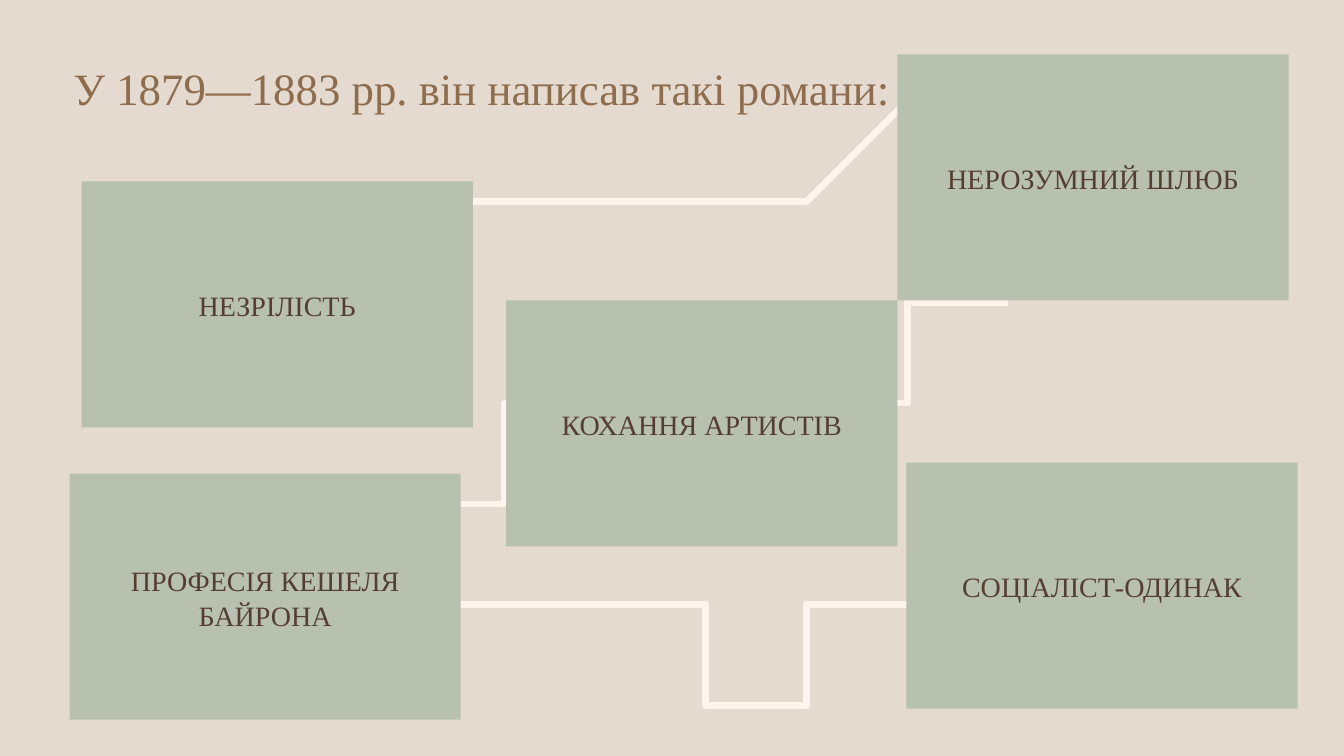
"""Build a slide of five novel titles on cards joined by winding threads."""
import pptx
import pptx.util
import pptx.dml.color
import pptx.enum.shapes
import pptx.enum.text
from lxml import etree

HUES = {"back": "E5DACF", "card": "B8C0B0", "thread": "FEF3ED",
        "title": "8D6D4D", "text": "543E34"}
FACE = "Times New Roman"
STEPS = 16

deck = pptx.Presentation()
deck.slide_width = pptx.util.Inches(13.33)
deck.slide_height = pptx.util.Inches(7.5)
cell = deck.slide_height / 7.5
slide = deck.slides.add_slide(deck.slide_layouts[6])


def hue(name):
    return pptx.dml.color.RGBColor.from_string(HUES[name])


def write(frame, text, size, name, align, space):
    frame.word_wrap = True
    frame.vertical_anchor = pptx.enum.text.MSO_ANCHOR.MIDDLE
    para = frame.paragraphs[0]
    para.text = text
    para.alignment = align
    para.line_spacing = space
    para.font.name = FACE
    para.font.size = pptx.util.Pt(size)
    para.font.color.rgb = hue(name)


slide.background.fill.solid()
slide.background.fill.fore_color.rgb = hue("back")

threads = [
    [(8.33, 3.83), (9.13, 3.63), (9.85, 3.27), (10.47, 2.75)],
    [(5.84, 4.28), (5.09, 4.52), (4.45, 4.9), (3.89, 5.39)],
    [(3.07, 2.23), (3.5, 1.87), (3.98, 1.77), (4.49, 1.9),
     (4.66, 1.94), (4.81, 2.01), (4.97, 2.09),
     (5.3, 2.24), (5.65, 2.35), (6.04, 2.36),
     (6.37, 2.36), (6.7, 2.29), (7.01, 2.17),
     (7.37, 2.03), (7.57, 1.93), (7.78, 1.83),
     (8.01, 1.71), (9.4, 1.03), (10.27, 1.46)],
    [(9.2, 5.79), (9.04, 5.86), (8.91, 5.95), (8.77, 6.05),
     (8.48, 6.25), (8.15, 6.41), (7.78, 6.47),
     (7.46, 6.53), (7.14, 6.51), (6.81, 6.44),
     (6.45, 6.36), (6.24, 6.29), (6.02, 6.22),
     (5.78, 6.15), (4.34, 5.7), (3.47, 6.36)],
]
for knots in threads:
    spots = []
    for first in range(0, len(knots) - 1, 3):
        a, b, c, d = knots[first:first + 4]
        for step in range(1, STEPS + 1):
            t = step / STEPS
            u = 1 - t
            spots.append([u**3 * p + 3 * u * u * t * q + 3 * u * t * t * r + t**3 * s
                          for p, q, r, s in zip(a, b, c, d)])
    pen = slide.shapes.build_freeform(*knots[0], scale=cell)
    pen.add_line_segments(spots, close=False)
    thread = pen.convert_to_shape()
    thread.shadow.inherit = False
    thread.fill.background()
    thread.line.color.rgb = hue("thread")
    thread.line.width = pptx.util.Pt(4.75)

cards = [
    (8.9, 0.54, "НЕРОЗУМНИЙ ШЛЮБ"),
    (0.81, 1.8, "НЕЗРІЛІСТЬ"),
    (5.02, 2.98, "КОХАННЯ АРТИСТІВ"),
    (8.99, 4.59, "СОЦІАЛІСТ-ОДИНАК"),
    (0.69, 4.7, "ПРОФЕСІЯ КЕШЕЛЯ БАЙРОНА"),
]
for col, row, text in cards:
    box = [int(n * cell) for n in (col, row, 3.88, 2.44)]
    card = slide.shapes.add_shape(pptx.enum.shapes.MSO_SHAPE.RECTANGLE, *box)
    card.shadow.inherit = False
    card.fill.solid()
    card.fill.fore_color.rgb = hue("card")
    card.line.fill.background()
    write(card.text_frame, text, 20, "text", pptx.enum.text.PP_ALIGN.CENTER, 1.05)

box = [int(n * cell) for n in (0.63, 0.45, 11.3, 0.91)]
title = slide.shapes.add_textbox(*box)
write(title.text_frame, "У 1879—1883 рр. він написав такі романи:", 32, "title",
      pptx.enum.text.PP_ALIGN.LEFT, 0.9)

deck.save("out.pptx")
